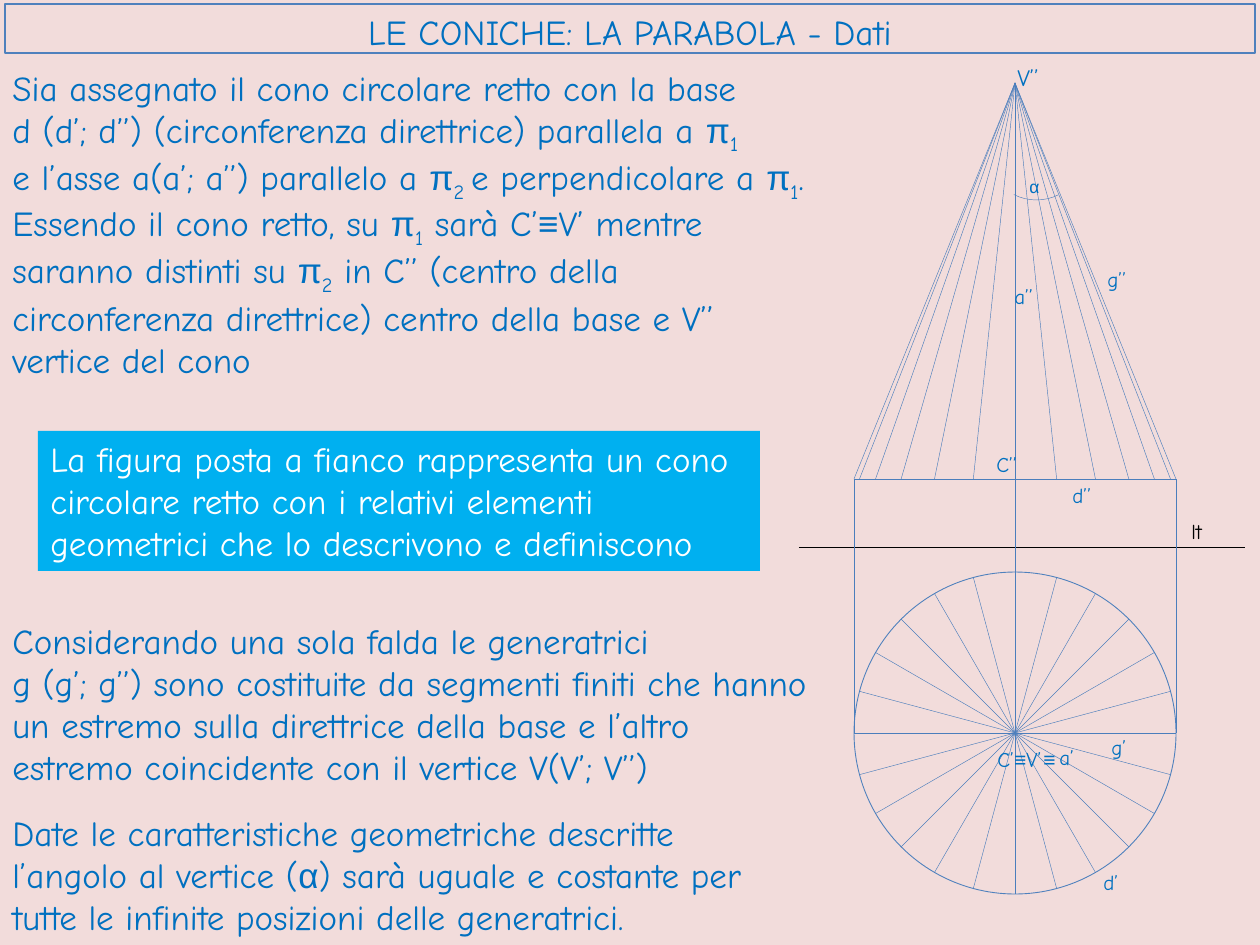
"""Builds the slide on the data of the parabola as a conic section."""
from dataclasses import dataclass
from math import cos, radians, sin

from lxml.etree import SubElement
from pptx import Presentation
from pptx.dml.color import RGBColor
from pptx.enum.shapes import MSO_CONNECTOR, MSO_SHAPE
from pptx.enum.text import MSO_ANCHOR, PP_ALIGN
from pptx.oxml.ns import qn
from pptx.util import Emu, Pt


@dataclass(frozen=True)
class Theme:
    """Colours, fonts, type sizes and line widths of the slide."""
    background: str = "F2DCDB"
    text: str = "0070C0"
    black: str = "000000"
    white: str = "FFFFFF"
    highlight: str = "00B0F0"
    outline: str = "4F81BD"
    drawing: str = "4B7EBC"
    font: str = "Comic Neue"
    symbol_font: str = "Arial"
    body: float = 20
    vertex: float = 13.5
    label: float = 12
    angle: float = 10
    frame: float = 0.75
    edge: float = 0.5
    thin: float = 0.25


class Drawing:
    """Draws themed elements on one slide, with lengths in px."""

    def __init__(self, slide, theme):
        self.slide = slide
        self.theme = theme
        slide.background.fill.solid()
        slide.background.fill.fore_color.rgb = RGBColor.from_string(theme.background)

    def px(self, *lengths):
        return [Emu(round(length * 914400 / 126)) for length in lengths]

    def line(self, start, end, width=None, color=None):
        connector = self.slide.shapes.add_connector(
            MSO_CONNECTOR.STRAIGHT, *self.px(*start, *end))
        connector.line.width = Pt(width or self.theme.thin)
        connector.line.color.rgb = RGBColor.from_string(color or self.theme.drawing)
        SubElement(connector._element.spPr, qn("a:effectLst"))

    def shape(self, preset, bounds, fill=None, line=None, width=None):
        shape = self.slide.shapes.add_shape(preset, *self.px(*bounds))
        shape.shadow.inherit = False
        if fill:
            shape.fill.solid()
            shape.fill.fore_color.rgb = RGBColor.from_string(fill)
        else:
            shape.fill.background()
        if line:
            shape.line.color.rgb = RGBColor.from_string(line)
            shape.line.width = Pt(width)
        else:
            shape.line.fill.background()
        return shape

    def fill_text(self, shape, paragraphs, size, color, align=PP_ALIGN.LEFT):
        frame = shape.text_frame
        frame.word_wrap = True
        frame.vertical_anchor = MSO_ANCHOR.TOP
        for index, runs in enumerate(paragraphs):
            paragraph = frame.add_paragraph() if index else frame.paragraphs[0]
            paragraph.alignment = align
            for text in runs:
                run = paragraph.add_run()
                run.text = text
                run.font.size = Pt(size)
                run.font.color.rgb = RGBColor.from_string(color)
                symbol = text in ("π", "≡", "α")
                run.font.name = self.theme.symbol_font if symbol else self.theme.font
                if text.strip().isdigit():
                    run.font._element.set("baseline", "-25000")

    def text(self, bounds, paragraphs, size=None, color=None):
        box = self.slide.shapes.add_textbox(*self.px(*bounds))
        self.fill_text(box, paragraphs, size or self.theme.body, color or self.theme.text)

    def label(self, left, top, *runs, width=48, size=None, color=None):
        self.text((left, top, width, 38), [runs], size or self.theme.label, color)


TITLE = "LE CONICHE: LA PARABOLA - Dati"
HIGHLIGHT = ("La figura posta a fianco rappresenta un cono circolare retto con i relativi "
             "elementi geometrici che lo descrivono e definiscono")
EXPLANATIONS = [
    ((0, 60, 866, 140), [
        ["Sia assegnato il cono circolare retto con la base"],
        ["d (d’; d’’) (circonferenza direttrice) parallela a ", "π", "1"],
        ["e l’asse a(a’; a’’) parallelo a ", "π", "2 ", "e perpendicolare a ",
         "π", "1", "."]]),
    ((0, 195, 822, 183), [
        ["Essendo il cono retto, su ", "π", "1", " sarà C’", "≡",
         "V’ mentre saranno distinti su ", "π", "2",
         " in C’’ (centro della circonferenza direttrice) centro della base "
         "e V’’ vertice del cono"]]),
    ((0, 613, 834, 183), [
        ["Considerando una sola falda le generatrici"],
        ["g (g’; g’’) sono costituite da segmenti finiti che hanno un estremo sulla "
         "direttrice della base e l’altro estremo coincidente con il vertice V(V’; V’’)"]]),
    ((0, 805, 809, 140), [
        ["Date le caratteristiche geometriche descritte l’angolo al vertice (", "α",
         ") sarà uguale e costante per tutte le infinite posizioni delle generatrici."]]),
]
AXIS_X, VERTEX_Y, BASE_Y, CENTER_Y, RADIUS = 1015, 83, 479, 733, 161
GROUND_Y = 547
SPOKES = 24
CROSS = 12


def draw_cone(drawing):
    theme = drawing.theme
    vertex, center = (AXIS_X, VERTEX_Y), (AXIS_X, CENTER_Y)
    left, right = AXIS_X - RADIUS, AXIS_X + RADIUS
    drawing.line((799, GROUND_Y), (1245, GROUND_Y), color=theme.black)
    drawing.shape(MSO_SHAPE.OVAL, (left, CENTER_Y - RADIUS, 2 * RADIUS, 2 * RADIUS),
                  line=theme.outline, width=theme.edge)
    drawing.line((left, BASE_Y), (right, BASE_Y), theme.edge)
    for side in (left, right):
        drawing.line((side, CENTER_Y), (side, BASE_Y))
    drawing.line(vertex, center)
    for step in range(SPOKES):
        angle = radians(360 / SPOKES * step)
        x = AXIS_X + RADIUS * cos(angle)
        if step <= SPOKES // 2 and step != SPOKES // 4:
            drawing.line(vertex, (x, BASE_Y))
        if step != SPOKES * 3 // 4:
            drawing.line(center, (x, CENTER_Y + RADIUS * sin(angle)))
    drawing.line((AXIS_X, CENTER_Y - CROSS), (AXIS_X, CENTER_Y + CROSS))
    drawing.line((AXIS_X - CROSS, CENTER_Y), (AXIS_X + CROSS, CENTER_Y))
    vertex_angle = drawing.shape(MSO_SHAPE.ARC, (992, 121, 89, 79),
                                 line=theme.drawing, width=theme.thin)
    for index, degrees in enumerate((57.5, 123.5)):
        vertex_angle.adjustments[index] = degrees * 0.6


def label_cone(drawing):
    theme = drawing.theme
    drawing.label(984, 445, "C’’", width=66)
    drawing.label(985, 740, "C’", "≡", "V’", width=76)
    drawing.label(1005, 57, "V’’", width=66, size=theme.vertex)
    drawing.label(1095, 260, "g’’")
    drawing.label(1099, 728, "g’")
    drawing.label(1179, 512, "lt", color=theme.black)
    drawing.label(1060, 476, "d’’")
    drawing.label(1091, 863, "d’")
    drawing.label(1017, 170, "α", size=theme.angle)
    drawing.label(1002, 277, "a’’")
    drawing.label(1047, 738, "a’")
    drawing.label(1031, 740, "≡")


def main():
    presentation = Presentation()
    presentation.slide_width, presentation.slide_height = Emu(9144000), Emu(6858000)
    theme = Theme()
    drawing = Drawing(presentation.slides.add_slide(presentation.slide_layouts[6]), theme)
    title = drawing.shape(MSO_SHAPE.RECTANGLE, (5, 4, 1250, 49),
                          line=theme.outline, width=theme.frame)
    drawing.fill_text(title, [[TITLE]], theme.body, theme.text, PP_ALIGN.CENTER)
    draw_cone(drawing)
    label_cone(drawing)
    for bounds, paragraphs in EXPLANATIONS:
        drawing.text(bounds, paragraphs)
    highlight = drawing.shape(MSO_SHAPE.RECTANGLE, (38, 431, 722, 140), theme.highlight)
    drawing.fill_text(highlight, [[HIGHLIGHT]], theme.body, theme.white)
    presentation.save("out.pptx")


if __name__ == "__main__":
    main()
